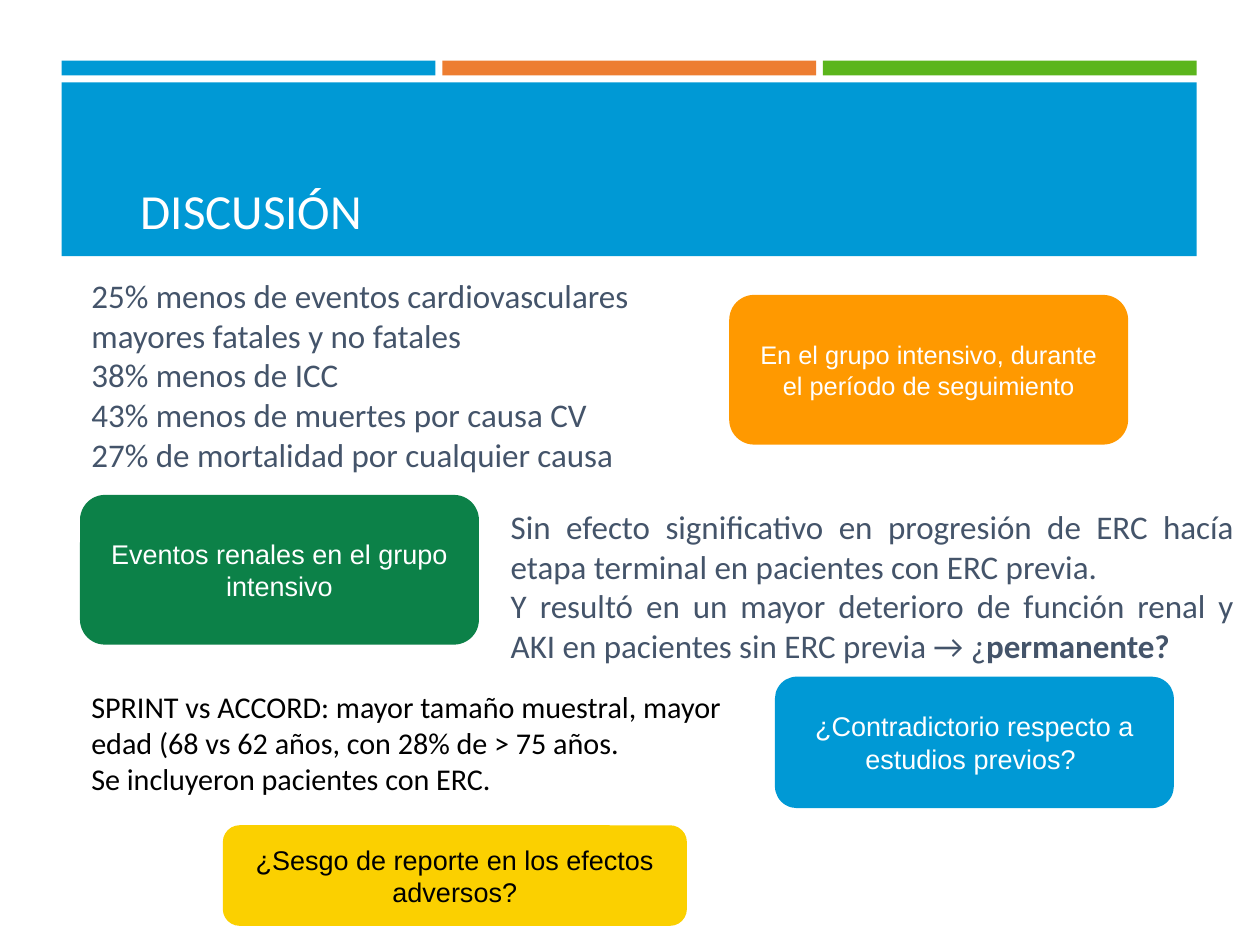
from lxml import etree
from pptx import Presentation
from pptx import util as u
from pptx.dml import color
from pptx.enum import shapes, text
from pptx.oxml import ns

COLORS = {
    "blue": "0099D5", "coral": "ED7D31", "lime": "5BB51C", "orange": "FF9900",
    "green": "0C8148", "yellow": "FBD000", "slate": "44546A",
    "white": "FFFFFF", "black": "000000",
}
LEFT, CENTER, JUSTIFY = text.PP_ALIGN.LEFT, text.PP_ALIGN.CENTER, text.PP_ALIGN.JUSTIFY
TOP, MIDDLE, BOTTOM = text.MSO_ANCHOR.TOP, text.MSO_ANCHOR.MIDDLE, text.MSO_ANCHOR.BOTTOM
CM_PER_INCH = 2.54


def add_block(kind, box, fill):
    """Add a plain filled shape without outline or shadow."""
    shape = slide.shapes.add_shape(kind, *map(u.Inches, box))
    shape.shadow.inherit = False
    shape.fill.solid()
    shape.fill.fore_color.rgb = color.RGBColor.from_string(COLORS[fill])
    shape.line.fill.background()
    return shape


def write(shape, paragraphs, size, font, ink, align, anchor, inset):
    """Fill a shape with paragraphs, each a list of runs; odd runs are bold."""
    frame = shape.text_frame
    margins = {"margin_left": 0.1, "margin_right": 0.1, "margin_top": inset, "margin_bottom": inset}
    for name, value in margins.items():
        setattr(frame, name, u.Inches(value))
    frame_format = {"word_wrap": True, "auto_size": text.MSO_AUTO_SIZE.NONE, "vertical_anchor": anchor}
    for name, value in frame_format.items():
        setattr(frame, name, value)
    paragraph_format = {"alignment": align, "line_spacing": 1.0,
                        "space_before": u.Pt(0), "space_after": u.Pt(0)}
    for index, runs in enumerate(paragraphs):
        paragraph = frame.add_paragraph() if index else frame.paragraphs[0]
        for name, value in paragraph_format.items():
            setattr(paragraph, name, value)
        for position, words in enumerate(runs):
            run = paragraph.add_run()
            run.text = words
            run_format = {"name": font, "size": u.Pt(size), "bold": position % 2 == 1}
            for name, value in run_format.items():
                setattr(run.font, name, value)
            run.font.color.rgb = color.RGBColor.from_string(COLORS[ink])


# A 4:3 page of 28 by 21 cm
presentation = Presentation()
presentation.slide_width = u.Inches(28 / CM_PER_INCH)
presentation.slide_height = u.Inches(21 / CM_PER_INCH)
slide = presentation.slides.add_slide(presentation.slide_layouts[1])
title, results = slide.placeholders

# Header: three thin bars over a banner, all behind the title
header = [((0.54 + 3.33 * column, 0.53, 3.27, 0.13), fill)
          for column, fill in enumerate(("blue", "coral", "lime"))]
header.append(((0.54, 0.72, 9.93, 1.52), "blue"))
for box, fill in header:
    bar = add_block(shapes.MSO_SHAPE.RECTANGLE, box, fill)
    title.element.addprevious(bar.element)

# Title and list of results
for placeholder, box in ((title, (1.13, 0.83, 9.2, 1.31)), (results, (0.7, 1.84, 10.19, 4.95))):
    for name, value in zip(("left", "top", "width", "height"), box):
        setattr(placeholder, name, u.Inches(value))
write(title, [["DISCUSIÓN"]], 30.9, "Calibri", "white", LEFT, BOTTOM, 0.05)
write(results, [
    ["25% menos de eventos cardiovasculares"],
    ["mayores fatales y no fatales"],
    ["38% menos de ICC"],
    ["43% menos de muertes por causa CV"],
    ["27% de mortalidad por cualquier causa"],
], 20.8, "Calibri", "slate", LEFT, TOP, 0.57)
for paragraph in results.text_frame.paragraphs:
    properties = paragraph._p.get_or_add_pPr()
    properties.set("marL", "0")
    properties.set("indent", "0")
    etree.SubElement(properties, ns.qn("a:buNone"))

# Free text: renal findings and trial comparison
notes = [
    ((4.37, 4.33, 6.52, 1.59), 20.8, "slate", JUSTIFY, [
        ["Sin efecto significativo en progresión de ERC hacía etapa terminal "
         "en pacientes con ERC previa. "],
        ["Y resultó en un mayor deterioro de función renal y AKI en pacientes "
         "sin ERC previa → ¿", "permanente? "],
    ]),
    ((0.7, 5.92, 6.09, 1.15), 19, "black", LEFT, [
        ["SPRINT vs ACCORD: mayor tamaño muestral, mayor edad "
         "(68 vs 62 años, con 28% de > 75 años."],
        ["Se incluyeron pacientes con ERC."],
    ]),
]
for box, size, ink, align, paragraphs in notes:
    note = slide.shapes.add_textbox(*map(u.Inches, box))
    write(note, paragraphs, size, "Calibri", ink, align, TOP, 0.1)

# Rounded callouts
callouts = [
    ((6.38, 2.58, 3.49, 1.31), "orange", "white", 16,
     "En el grupo intensivo, durante el período de seguimiento"),
    ((0.7, 4.33, 3.49, 1.31), "green", "white", 17, "Eventos renales en el grupo intensivo"),
    ((6.78, 5.92, 3.49, 1.15), "blue", "white", 17, "¿Contradictorio respecto a estudios previos? "),
    ((1.95, 7.22, 4.06, 0.88), "yellow", "black", 17, "¿Sesgo de reporte en los efectos adversos?"),
]
for box, fill, ink, size, words in callouts:
    callout = add_block(shapes.MSO_SHAPE.ROUNDED_RECTANGLE, box, fill)
    write(callout, [[words]], size, "Arial", ink, CENTER, MIDDLE, 0.1)

presentation.save("out.pptx")
